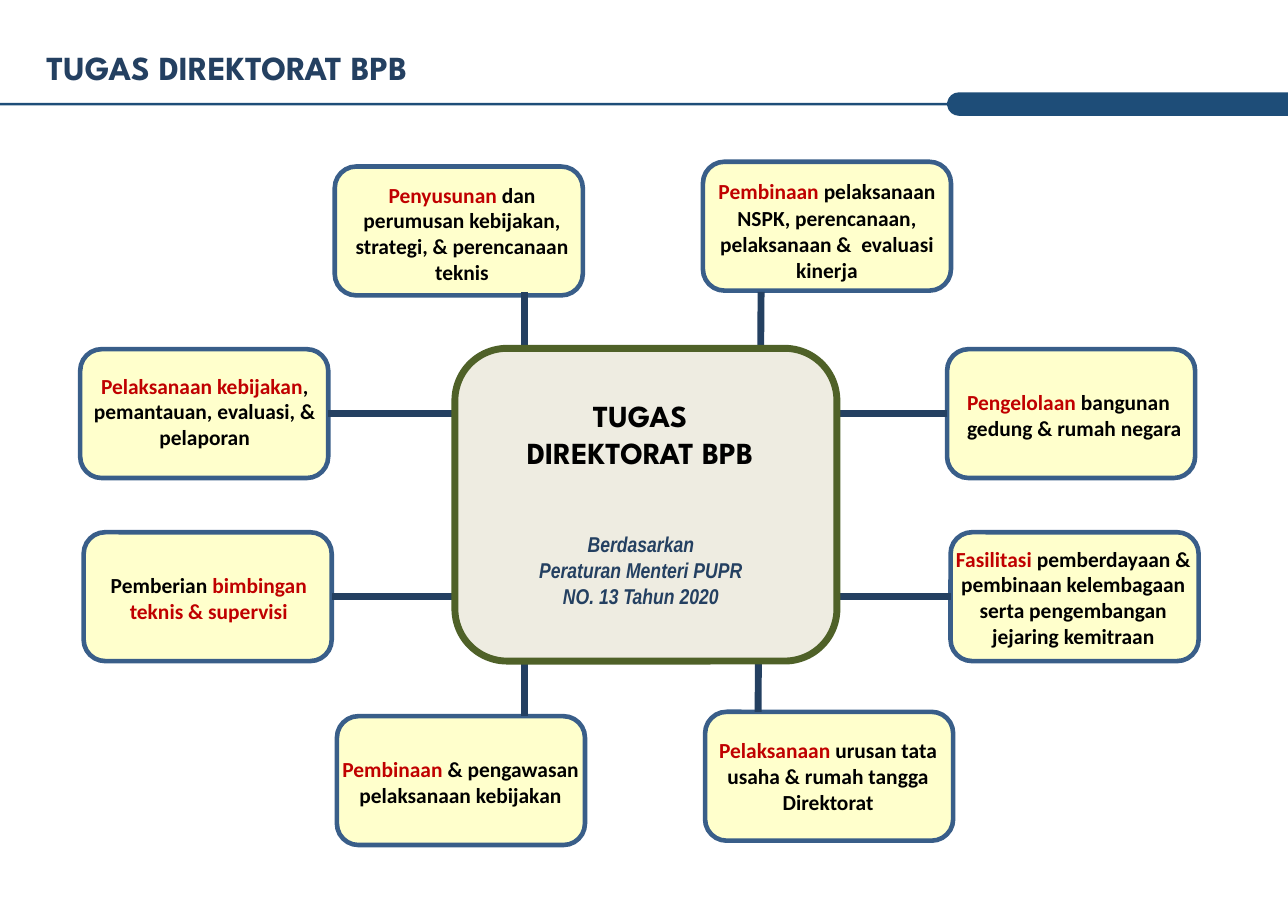
from dataclasses import dataclass
from math import cos, radians, sin

from lxml.etree import SubElement
from pptx import Presentation
from pptx.dml.color import RGBColor
from pptx.enum.shapes import MSO_CONNECTOR, MSO_SHAPE
from pptx.enum.text import MSO_AUTO_SIZE, PP_ALIGN
from pptx.oxml.ns import qn
from pptx.util import Cm, Pt


@dataclass(frozen=True)
class Theme:
    navy: str = "244061"
    header: str = "1E4D78"
    box_fill: str = "FFFFCC"
    box_line: str = "395E89"
    center_fill: str = "EEECE1"
    center_line: str = "4F6128"
    accent: str = "C00000"
    black: str = "000000"
    heading_font: str = "League Spartan"
    body_font: str = "Calibri"
    source_font: str = "Arial Narrow"
    title_size: float = 22
    center_size: float = 20
    body_size: float = 14
    box_border: float = 3
    heavy_line: float = 4.5


PAGE_WIDTH, PAGE_HEIGHT = 29.7, 21
BOX_WIDTH, BOX_HEIGHT = 5.72, 2.97
theme = Theme()
RED, BLACK = theme.accent, theme.black

# name: (box left and top, text frame, alignment, line spacing, colored runs)
DUTIES = {
    "policy": ((7.72, 3.84), (7.85, 4.06, 5.61, 2.64), PP_ALIGN.CENTER, 1, [
        ("Penyusunan ", RED),
        ("dan perumusan kebijakan, strategi, & perencanaan teknis", BLACK)]),
    "oversight": ((7.77, 16.51), (7.57, 17.3, 6.1, 1.45), PP_ALIGN.CENTER, 1, [
        ("Pembinaan ", RED), ("& pengawasan pelaksanaan kebijakan", BLACK)]),
    "execution": ((1.85, 8.05), (1.85, 8.46, 5.74, 2.06), PP_ALIGN.CENTER, 1, [
        ("Pelaksanaan kebijakan", RED),
        (", pemantauan, evaluasi, & pelaporan", BLACK)]),
    "guidance": ((1.93, 12.27), (1.93, 13.06, 5.77, 1.45), PP_ALIGN.CENTER, 1, [
        ("Pemberian ", BLACK), ("bimbingan teknis & supervisi", RED)]),
    "performance": ((16.21, 3.73), (16.21, 3.96, 5.72, 2.69), PP_ALIGN.CENTER, 1.03, [
        ("Pembinaan ", RED),
        ("pelaksanaan NSPK, perencanaan, pelaksanaan &  evaluasi kinerja", BLACK)]),
    "administration": ((16.26, 16.41), (16.21, 16.87, 5.77, 2.06), PP_ALIGN.CENTER, 1, [
        ("Pelaksanaan ", RED),
        ("urusan tata usaha & rumah tangga Direktorat", BLACK)]),
    "buildings": ((21.84, 8.05), (22.05, 8.84, 5.64, 1.45), PP_ALIGN.LEFT, 1, [
        ("Pengelolaan ", RED), ("bangunan gedung & rumah negara", BLACK)]),
    "partnership": ((21.92, 12.27), (21.74, 12.45, 6.02, 2.64), PP_ALIGN.CENTER, 1, [
        ("Fasilitasi ", RED),
        ("pemberdayaan & pembinaan kelembagaan serta pengembangan "
         "jejaring kemitraan", BLACK)]),
}


class SlideBuilder:
    def __init__(self, slide, theme):
        self.slide = slide
        self.theme = theme

    def text(self, frame, paragraphs, font, size, align=PP_ALIGN.CENTER,
             spacing=1, italic=False, margins=(0.25, 0.13)):
        """Add a text box; each paragraph is a list of (text, color) runs."""
        box = self.slide.shapes.add_textbox(*map(Cm, frame))
        text_frame = box.text_frame
        text_frame.word_wrap = True
        text_frame.auto_size = MSO_AUTO_SIZE.SHAPE_TO_FIT_TEXT
        text_frame.margin_left = text_frame.margin_right = Cm(margins[0])
        text_frame.margin_top = text_frame.margin_bottom = Cm(margins[1])
        for index, runs in enumerate(paragraphs):
            paragraph = text_frame.add_paragraph() if index else text_frame.paragraphs[0]
            paragraph.alignment = align
            paragraph.line_spacing = spacing
            for content, color in runs:
                run = paragraph.add_run()
                run.text = content
                run.font.name = font
                run.font.size = Pt(size)
                run.font.bold = True
                run.font.italic = italic
                run.font.color.rgb = RGBColor.from_string(color)

    def rounded_box(self, frame, fill, line, border):
        shape = self.slide.shapes.add_shape(MSO_SHAPE.ROUNDED_RECTANGLE, *map(Cm, frame))
        shape.adjustments[0] = 0.167
        shape.shadow.inherit = False
        shape.fill.solid()
        shape.fill.fore_color.rgb = RGBColor.from_string(fill)
        shape.line.color.rgb = RGBColor.from_string(line)
        shape.line.width = Pt(border)
        return shape

    def connector(self, start=(0, 0), end=(0, 0)):
        connector = self.slide.shapes.add_connector(
            MSO_CONNECTOR.STRAIGHT, *map(Cm, start + end))
        connector.line.color.rgb = RGBColor.from_string(self.theme.navy)
        connector.line.width = Pt(self.theme.heavy_line)
        SubElement(connector.element.spPr, qn("a:effectLst"))
        return connector

    def header_rule(self, bar_left=21.84, middle=2.4, radius=0.27, half_rule=0.03):
        """Draw a thin rule that widens into a bar with a round left end."""
        upper = [(PAGE_WIDTH, -radius)]
        upper += [(bar_left + radius * (1 - sin(radians(angle))),
                   -radius * cos(radians(angle))) for angle in range(0, 81, 20)]
        upper += [(bar_left, -half_rule), (0, -half_rule)]
        outline = upper + [(x, -y) for x, y in reversed(upper)]
        points = [(Cm(x), Cm(middle + y)) for x, y in outline]
        builder = self.slide.shapes.build_freeform(*points[0])
        builder.add_line_segments(points[1:], close=True)
        shape = builder.convert_to_shape()
        shape.shadow.inherit = False
        shape.fill.solid()
        shape.fill.fore_color.rgb = RGBColor.from_string(self.theme.header)
        shape.line.fill.background()


def main():
    presentation = Presentation()
    presentation.slide_width = Cm(PAGE_WIDTH)
    presentation.slide_height = Cm(PAGE_HEIGHT)
    slide = presentation.slides.add_slide(presentation.slide_layouts[6])
    builder = SlideBuilder(slide, theme)

    builder.text((1.07, 1.07, 27.53, 0.97), [[("TUGAS DIREKTORAT BPB", theme.navy)]],
                 theme.heading_font, theme.title_size, PP_ALIGN.LEFT, margins=(0, 0))
    builder.header_rule()

    boxes = {
        name: builder.rounded_box((*corner, BOX_WIDTH, BOX_HEIGHT), theme.box_fill,
                                  theme.box_line, theme.box_border)
        for name, (corner, *_) in DUTIES.items()
    }
    for _, frame, align, spacing, runs in DUTIES.values():
        builder.text(frame, [runs], theme.body_font, theme.body_size, align, spacing)

    builder.connector((17.55, 6.73), (17.48, 16.41))
    builder.connector((12.09, 6.73), (12.09, 16.51))
    for right, left in (("buildings", "execution"), ("partnership", "guidance")):
        connector = builder.connector()
        connector.begin_connect(boxes[right], 1)
        connector.end_connect(boxes[left], 3)

    builder.rounded_box((10.49, 8.03, 8.81, 7.21), theme.center_fill,
                        theme.center_line, theme.heavy_line)
    builder.text((10.95, 9.02, 7.62, 1.96),
                 [[("TUGAS", BLACK)], [("DIREKTORAT BPB", BLACK)]],
                 theme.heading_font, theme.center_size)
    source_lines = ("Berdasarkan", "Peraturan Menteri PUPR", "NO. 13 Tahun 2020")
    builder.text((10.97, 12.12, 7.62, 2.06),
                 [[(line, theme.navy)] for line in source_lines],
                 theme.source_font, theme.body_size, italic=True)

    presentation.save("out.pptx")


if __name__ == "__main__":
    main()
